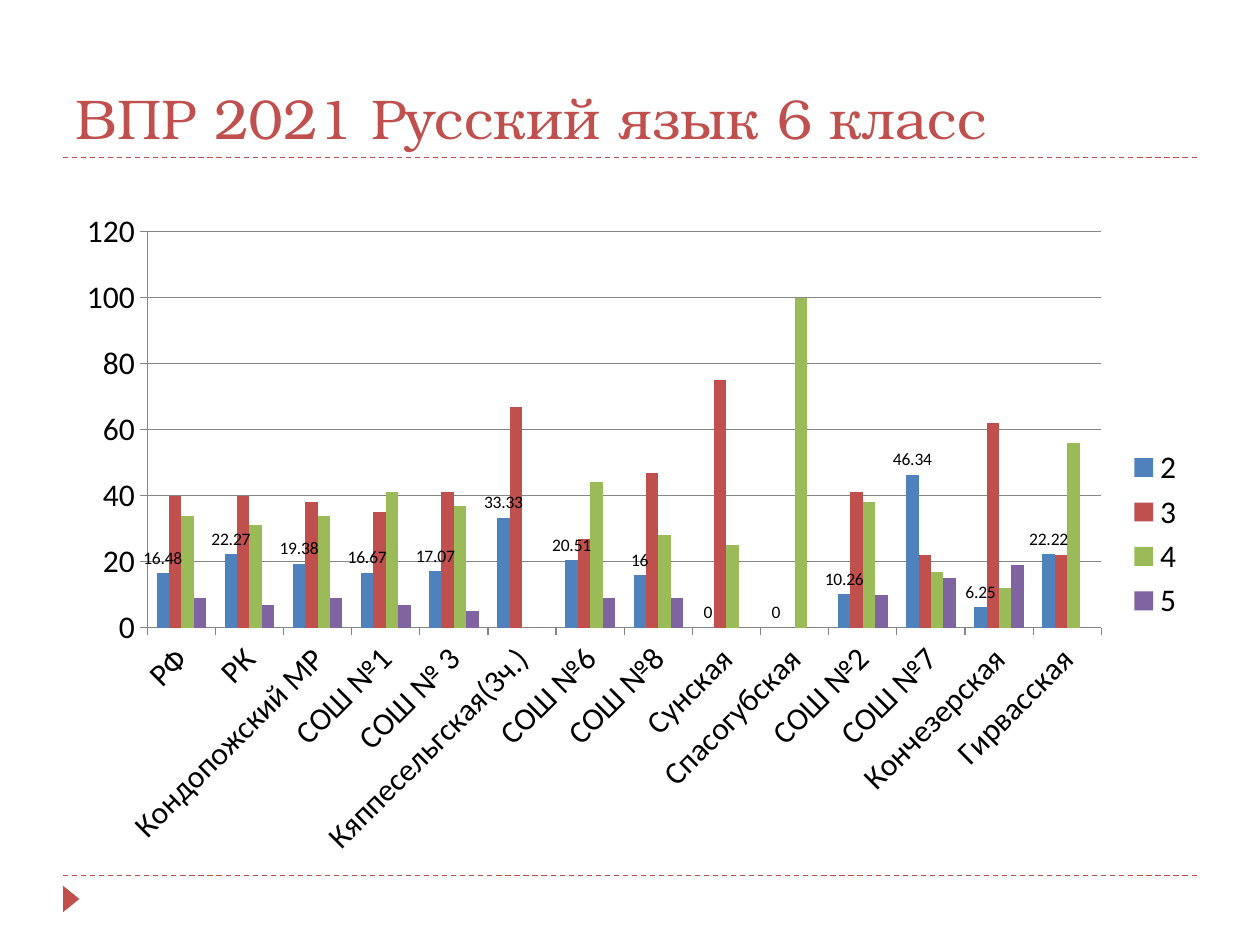
"""Build the slide with sixth-grade Russian test results by school."""
from typing import NamedTuple

from lxml import etree
from pptx import Presentation
from pptx.chart.data import CategoryChartData
from pptx.dml.color import RGBColor
from pptx.enum import chart as ch, dml, shapes, text
from pptx.oxml.ns import qn
from pptx.util import Inches, Pt

HUES = {"red": "C0504D", "blue": "4F81BD", "green": "9BBB59",
        "violet": "8064A2", "black": "000000", "gray": "868686"}


class Grade(NamedTuple):
    name: str
    hue: str
    vals: tuple[float, ...]


SCHOOLS = ("РФ", "РК", "Кондопожский МР", "СОШ №1", "СОШ № 3",
           "Кяппесельгская(3ч.)", "СОШ №6", "СОШ №8", "Сунская",
           "Спасогубская", "СОШ №2", "СОШ №7", "Кончезерская", "Гирвасская")
GRADES = (
    Grade("2", "blue", (16.48, 22.27, 19.38, 16.67, 17.07, 33.33, 20.51, 16,
                        0, 0, 10.26, 46.34, 6.25, 22.22)),
    Grade("3", "red", (40, 40, 38, 35, 41, 67, 27, 47, 75, 0, 41, 22, 62, 22)),
    Grade("4", "green", (34, 31, 34, 41, 37, 0, 44, 28, 25, 100, 38, 17, 12, 56)),
    Grade("5", "violet", (9, 7, 9, 7, 5, 0, 9, 9, 0, 0, 10, 15, 19, 0)),
)


def tint(name: str) -> RGBColor:
    """Return the named colour."""
    return RGBColor.from_string(HUES[name])


def style(font, size: float, face: str, hue: str) -> None:
    """Set the size, face and colour of a font."""
    font.size, font.name = Pt(size), face
    font.color.rgb = tint(hue)


def add_rule(slide, y: float) -> None:
    """Draw a dashed rule across the slide."""
    rule = slide.shapes.add_connector(
        shapes.MSO_CONNECTOR.STRAIGHT, Inches(0.5), Inches(y), Inches(9.5), Inches(y))
    rule.line.color.rgb = tint("red")
    rule.line.width = Pt(0.75)
    rule.line.dash_style = dml.MSO_LINE.DASH
    etree.SubElement(rule._element.spPr, qn("a:effectLst"))


def add_mark(slide) -> None:
    """Draw the triangle in the footer."""
    mark = slide.shapes.add_shape(
        shapes.MSO_SHAPE.ISOSCELES_TRIANGLE,
        Inches(0.46), Inches(7.07), Inches(0.21), Inches(0.13))
    mark.rotation = 90
    mark.shadow.inherit = False
    mark.fill.solid()
    mark.fill.fore_color.rgb = tint("red")
    mark.line.fill.background()


def add_title(slide, words: str) -> None:
    """Place and fill the title."""
    title = slide.shapes.title
    title.left, title.top = Inches(0.5), Inches(0.17)
    title.width, title.height = Inches(9), Inches(1.08)
    frame = title.text_frame
    frame.word_wrap = True
    frame.vertical_anchor = text.MSO_ANCHOR.BOTTOM
    para = frame.paragraphs[0]
    para.alignment = text.PP_ALIGN.LEFT
    run = para.add_run()
    run.text = words
    style(run.font, 32, "TeX Gyre Bonum", "red")


def add_graph(slide) -> None:
    """Draw the column chart of grade shares."""
    data = CategoryChartData()
    data.categories = SCHOOLS
    for grade in GRADES:
        data.add_series(grade.name, grade.vals)
    graph = slide.shapes.add_chart(
        ch.XL_CHART_TYPE.COLUMN_CLUSTERED,
        Inches(0.51), Inches(1.58), Inches(8.99), Inches(5.32), data).chart
    style(graph.font, 18, "Calibri", "black")
    graph.has_title = False
    graph.has_legend = True
    graph.legend.position = ch.XL_LEGEND_POSITION.RIGHT
    graph.legend.include_in_layout = False

    for axis in (graph.category_axis, graph.value_axis):
        axis.major_tick_mark = ch.XL_TICK_MARK.OUTSIDE
        axis.format.line.color.rgb = tint("gray")
    scale = graph.value_axis
    scale.minimum_scale, scale.maximum_scale, scale.major_unit = 0, 120, 20
    scale.has_major_gridlines = True
    scale.major_gridlines.format.line.color.rgb = tint("gray")

    plot = graph.plots[0]
    plot.gap_width, plot.overlap = 150, 0
    plot.vary_by_categories = False
    for bars, grade in zip(plot.series, GRADES):
        bars.format.fill.solid()
        bars.format.fill.fore_color.rgb = tint(grade.hue)
        bars.invert_if_negative = False
    labels = plot.series[0].data_labels
    labels.show_value = True
    labels.position = ch.XL_LABEL_POSITION.OUTSIDE_END
    style(labels.font, 10, "Calibri", "black")


def main() -> None:
    """Build and save the slide."""
    deck = Presentation()
    deck.slide_width, deck.slide_height = Inches(10), Inches(7.5)
    slide = deck.slides.add_slide(deck.slide_layouts[5])
    for y in (6.95, 1.25):
        add_rule(slide, y)
    add_mark(slide)
    add_title(slide, "ВПР 2021 Русский язык 6 класс")
    add_graph(slide)
    deck.save("out.pptx")


if __name__ == "__main__":
    main()
